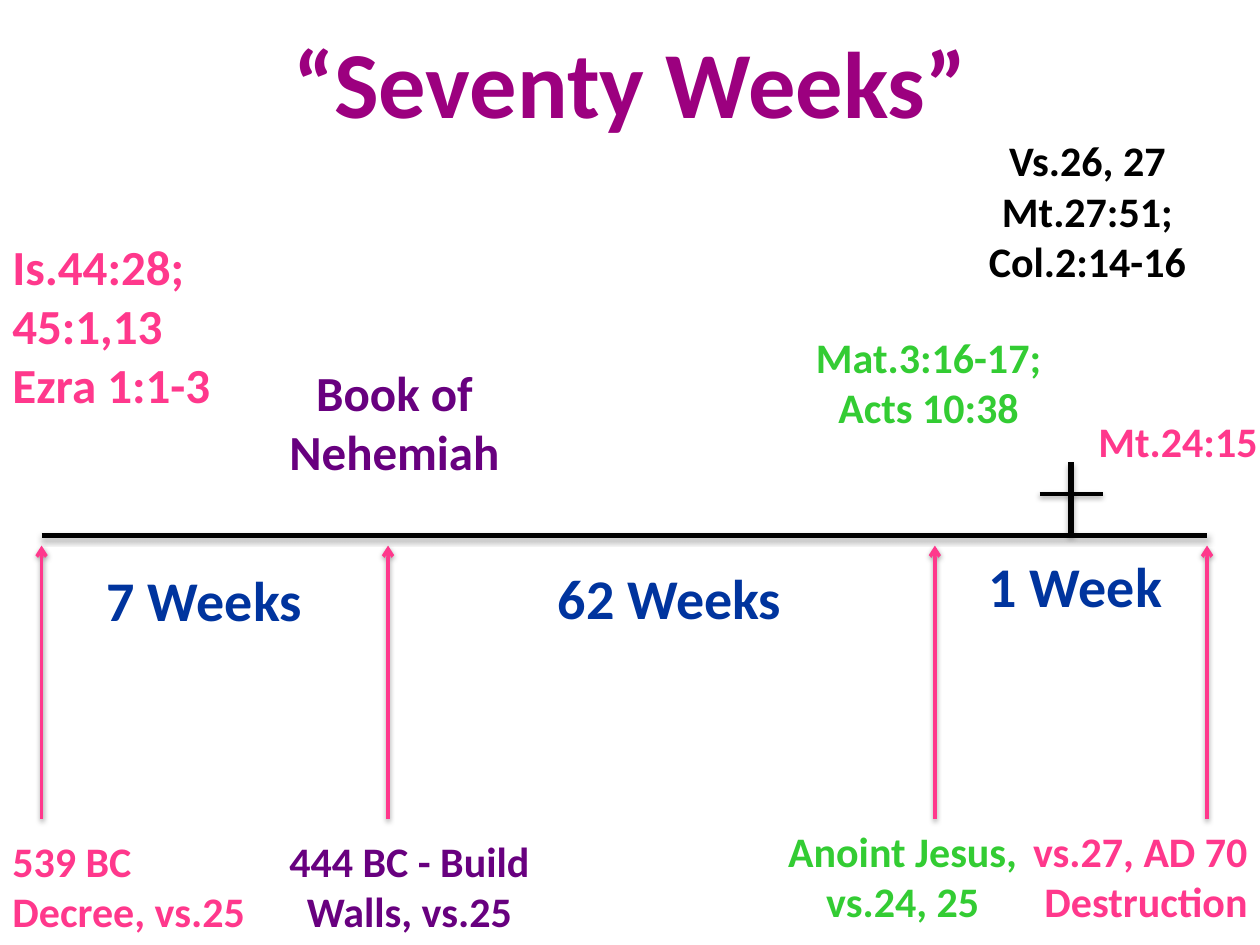
from lxml.etree import SubElement
from pptx import Presentation
from pptx.dml.color import RGBColor
from pptx.enum.shapes import MSO_CONNECTOR as Connector
from pptx.enum.text import MSO_ANCHOR as Anchor, MSO_AUTO_SIZE as AutoSize, PP_ALIGN as Align
from pptx.oxml.ns import qn
from pptx.util import Inches, Pt

MAGENTA = RGBColor(0x9C, 0x00, 0x7F)
PINK = RGBColor(0xFF, 0x38, 0x8C)
PURPLE = RGBColor(0x68, 0x00, 0x7F)
GREEN = RGBColor(0x33, 0xCC, 0x33)
BLUE = RGBColor(0x00, 0x34, 0x9E)
BLACK = RGBColor(0, 0, 0)
FONT = "Calibri"

# Timeline geometry, in inches
EVENTS = [0.33, 3.08, 7.42, 9.58]
AXIS_Y, ARROW_TOP, ARROW_BOTTOM = 4.25, 4.33, 6.5
CROSS_X, CROSS_TOP, CROSS_BAR_Y, CROSS_ARM = 8.5, 3.67, 3.92, 0.25

TITLE = "“Seventy Weeks”"

# Text, left, top, width, height, size, colour, alignment
LABELS = [
    # Periods
    ("7 Weeks", 0.75, 4.44, 1.75, 0.64, 32, BLUE, Align.LEFT),
    ("62 Weeks", 4.33, 4.42, 2.17, 0.64, 32, BLUE, Align.LEFT),
    ("1 Week", 7.75, 4.33, 1.75, 0.64, 32, BLUE, Align.LEFT),
    # Events below the arrows
    ("539 BC Decree, vs.25", 0, 6.58, 2.08, 0.91, 24, PINK, Align.LEFT),
    ("444 BC - Build Walls, vs.25", 2, 6.58, 2.5, 0.91, 24, PURPLE, Align.CENTER),
    ("Anoint Jesus, vs.24, 25", 6.08, 6.5, 2.17, 0.91, 24, GREEN, Align.CENTER),
    ("vs.27, AD 70 Destruction", 7.67, 6.5, 2.33, 0.91, 24, PINK, Align.RIGHT),
    # Scripture references above the axis
    ("Is.44:28; 45:1,13 Ezra 1:1-3", 0, 1.83, 1.92, 1.51, 28, PINK, Align.LEFT),
    ("Book of Nehemiah", 2.17, 2.83, 1.92, 1.04, 28, PURPLE, Align.CENTER),
    ("Mat.3:16-17; Acts 10:38", 6.33, 2.58, 2.08, 0.91, 24, GREEN, Align.CENTER),
    ("Vs.26, 27 Mt.27:51; Col.2:14-16", 7.67, 1.02, 1.92, 1.31, 24, BLACK, Align.CENTER),
    ("Mt.24:15", 8.5, 3.25, 1.58, 0.5, 24, PINK, Align.RIGHT),
]


def place(shape, left, top, width, height):
    shape.left, shape.top = Inches(left), Inches(top)
    shape.width, shape.height = Inches(width), Inches(height)


def write(frame, text, size, color, align):
    paragraph = frame.paragraphs[0]
    paragraph.alignment = align
    run = paragraph.add_run()
    run.text = text
    run.font.name, run.font.size, run.font.bold = FONT, Pt(size), True
    run.font.color.rgb = color


def add_line(slide, start, end, color, width, arrow=False):
    line = slide.shapes.add_connector(Connector.STRAIGHT, *map(Inches, start + end))
    line.line.color.rgb = color
    line.line.width = Pt(width)
    properties = line._element.spPr
    if arrow:
        SubElement(properties.find(qn("a:ln")), qn("a:tailEnd"), type="arrow")
    # Soft shadow straight below; thick lines have a lighter, longer one
    distance, alpha = (1.8, 35000) if width > 2 else (1.6, 38000)
    effects = SubElement(properties, qn("a:effectLst"))
    shadow = SubElement(effects, qn("a:outerShdw"), blurRad=str(Pt(3.1)),
                        dist=str(Pt(distance)), dir="5400000", rotWithShape="0")
    tint = SubElement(shadow, qn("a:srgbClr"), val="000000")
    SubElement(tint, qn("a:alpha"), val=str(alpha))


def main():
    deck = Presentation()
    deck.slide_width, deck.slide_height = Inches(10), Inches(7.5)
    slide = deck.slides.add_slide(deck.slide_layouts[5])

    # Title
    title = slide.shapes.title
    place(title, 0.5, 0.08, 9, 1.12)
    title.text_frame.vertical_anchor = Anchor.MIDDLE
    write(title.text_frame, TITLE, 54, MAGENTA, Align.CENTER)

    # Axis and event arrows
    add_line(slide, (EVENTS[0], AXIS_Y), (EVENTS[-1], AXIS_Y), BLACK, 3)
    for x in EVENTS:
        add_line(slide, (x, ARROW_BOTTOM), (x, ARROW_TOP), PINK, 2, arrow=True)

    # Cross
    add_line(slide, (CROSS_X, CROSS_TOP), (CROSS_X, AXIS_Y), BLACK, 3)
    add_line(slide, (CROSS_X - CROSS_ARM, CROSS_BAR_Y),
             (CROSS_X + CROSS_ARM, CROSS_BAR_Y), BLACK, 2)

    # Labels
    for text, left, top, width, height, size, color, align in LABELS:
        label = slide.shapes.add_textbox(*map(Inches, (left, top, width, height)))
        label.text_frame.word_wrap = True
        label.text_frame.auto_size = AutoSize.SHAPE_TO_FIT_TEXT
        write(label.text_frame, text, size, color, align)

    deck.save("out.pptx")


if __name__ == "__main__":
    main()
